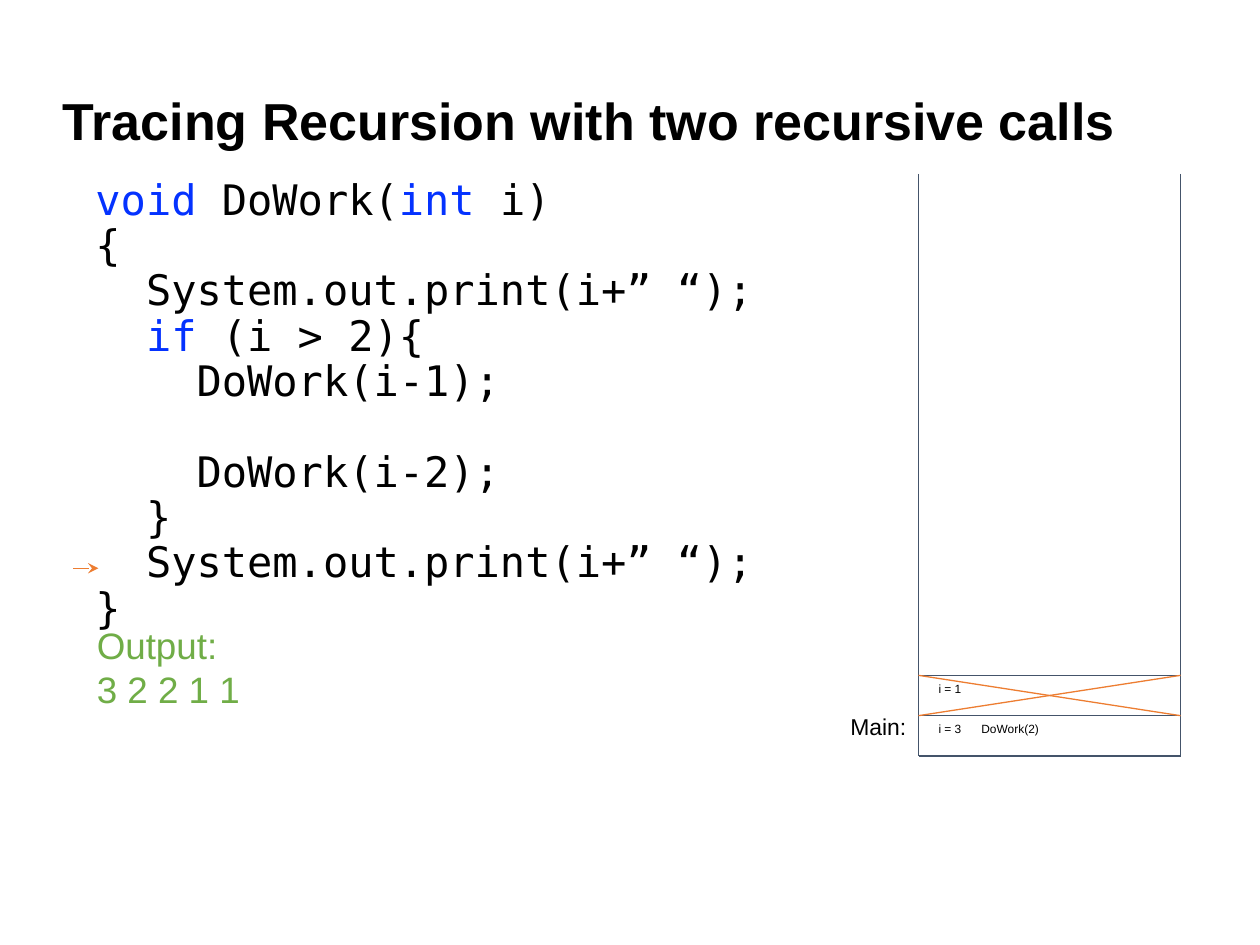
import pptx
import pptx.dml.color
import pptx.enum.shapes
import pptx.enum.text
import pptx.oxml.ns
import pptx.util
from lxml import etree
from pptx.util import Inches

RGBColor = pptx.dml.color.RGBColor
BLACK = RGBColor(0x00, 0x00, 0x00)
KEYWORD = RGBColor(0x04, 0x32, 0xFF)
SLATE = RGBColor(0x44, 0x54, 0x6A)
ORANGE = RGBColor(0xED, 0x7D, 0x31)
GREEN = RGBColor(0x70, 0xAD, 0x47)
SANS, MONO = "Arial", "DejaVu Sans Mono"
KEYWORDS = ("void", "int", "if")

# Each block is a paragraph; each line is a list of runs.
CODE = [
    [["void", " DoWork(", "int", " i)"],
     ["{"],
     ["  System.out.print(i+” “);"],
     ["  ", "if", " (i > 2){"],
     ["    DoWork(i-1);"]],
    [["    DoWork(i-2);"],
     ["  }"],
     ["  System.out.print(i+” “);"],
     ["}"]],
]


def add_text_frame(slide, left, top, width, height, inset=0.1):
    box = slide.shapes.add_textbox(Inches(left), Inches(top), Inches(width), Inches(height))
    tf = box.text_frame
    tf.word_wrap = True
    tf.margin_left = tf.margin_right = Inches(0.1)
    tf.margin_top = tf.margin_bottom = Inches(inset)
    return tf


def add_run(p, text, size, color=BLACK, font=SANS, bold=False):
    r = p.add_run()
    r.text = text
    r.font.name = font
    r.font.size = pptx.util.Pt(size)
    r.font.bold = bold
    r.font.color.rgb = color


def add_line(slide, x1, y1, x2, y2, color=SLATE):
    line = slide.shapes.add_connector(
        pptx.enum.shapes.MSO_CONNECTOR.STRAIGHT,
        Inches(x1), Inches(y1), Inches(x2), Inches(y2))
    line.line.color.rgb = color
    line.line.width = pptx.util.Pt(0.75)
    etree.SubElement(line._element.spPr, pptx.oxml.ns.qn("a:effectLst"))
    return line


def add_title(slide, left, top, width, height):
    tf = add_text_frame(slide, left, top, width, height, inset=0.05)
    tf.vertical_anchor = pptx.enum.text.MSO_ANCHOR.MIDDLE
    p = tf.paragraphs[0]
    p.line_spacing = 0.9
    add_run(p, "Tracing Recursion with two recursive calls", 29.7, bold=True)


def add_code(slide, left, top, width, height):
    tf = add_text_frame(slide, left, top, width, height, inset=0.05)
    for b, block in enumerate(CODE):
        p = tf.add_paragraph() if b else tf.paragraphs[0]
        p.line_spacing = 0.9
        if b:
            p.space_before = pptx.util.Pt(26)
        for n, runs in enumerate(block):
            if n:
                p.add_line_break()
            for text in runs:
                color = KEYWORD if text in KEYWORDS else BLACK
                add_run(p, text, 24, color, MONO)


def add_current_line_arrow(slide, left, y, width):
    arrow = add_line(slide, left, y, left + width, y, ORANGE)
    etree.SubElement(arrow.line._get_or_add_ln(), pptx.oxml.ns.qn("a:tailEnd"), type="stealth")


def add_output(slide, left, top, width, height):
    tf = add_text_frame(slide, left, top, width, height)
    for n, text in enumerate(["Output:", "3 2 2 1 1"]):
        p = tf.add_paragraph() if n else tf.paragraphs[0]
        add_run(p, text, 21, GREEN)


def add_frame_label(slide, left, top, width, height, text):
    """Label one stack frame; a tab sets off the pending call."""
    p = add_text_frame(slide, left, top, width, height).paragraphs[0]
    p.line_spacing = 0.9
    tabs = etree.SubElement(p._p.get_or_add_pPr(), pptx.oxml.ns.qn("a:tabLst"))
    etree.SubElement(tabs, pptx.oxml.ns.qn("a:tab"), pos=str(Inches(0.34)), algn="l")
    add_run(p, text, 6.8)


def add_call_stack(slide, left, top, width, height):
    """Draw an open-topped stack, its frames listed from the bottom up."""
    right, bottom = left + width, top + height
    frame_height = 0.32
    for x in (left, right):
        add_line(slide, x, top, x, bottom)
    add_line(slide, left, bottom, right, bottom)
    for n, (text, finished) in enumerate([("i = 3\tDoWork(2)", False), ("i = 1", True)]):
        low = bottom - n * frame_height
        high = low - frame_height
        add_line(slide, left, high, right, high)
        add_frame_label(slide, left + 0.06, high + 0.01, width - 0.06, 0.31, text)
        if finished:
            add_line(slide, right, high, left, low, ORANGE)
            add_line(slide, left, high, right, low, ORANGE)
    tf = add_text_frame(slide, left - 0.64, bottom - 0.39, 0.66, 0.38)
    tf.word_wrap = False
    p = tf.paragraphs[0]
    p.line_spacing = 0.8
    add_run(p, "Main:", 13.1)


def main():
    prs = pptx.Presentation()
    prs.slide_width, prs.slide_height = Inches(10), Inches(7.5)
    slide = prs.slides.add_slide(prs.slide_layouts[6])
    add_title(slide, 0.4, 0.56, 9.21, 0.84)
    add_code(slide, 0.66, 1.37, 5.46, 3.43)
    add_current_line_arrow(slide, 0.58, 4.51, 0.2)
    add_output(slide, 0.67, 4.84, 5.54, 2.04)
    add_call_stack(slide, 7.29, 1.38, 2.08, 4.62)
    prs.save("out.pptx")


if __name__ == "__main__":
    main()
